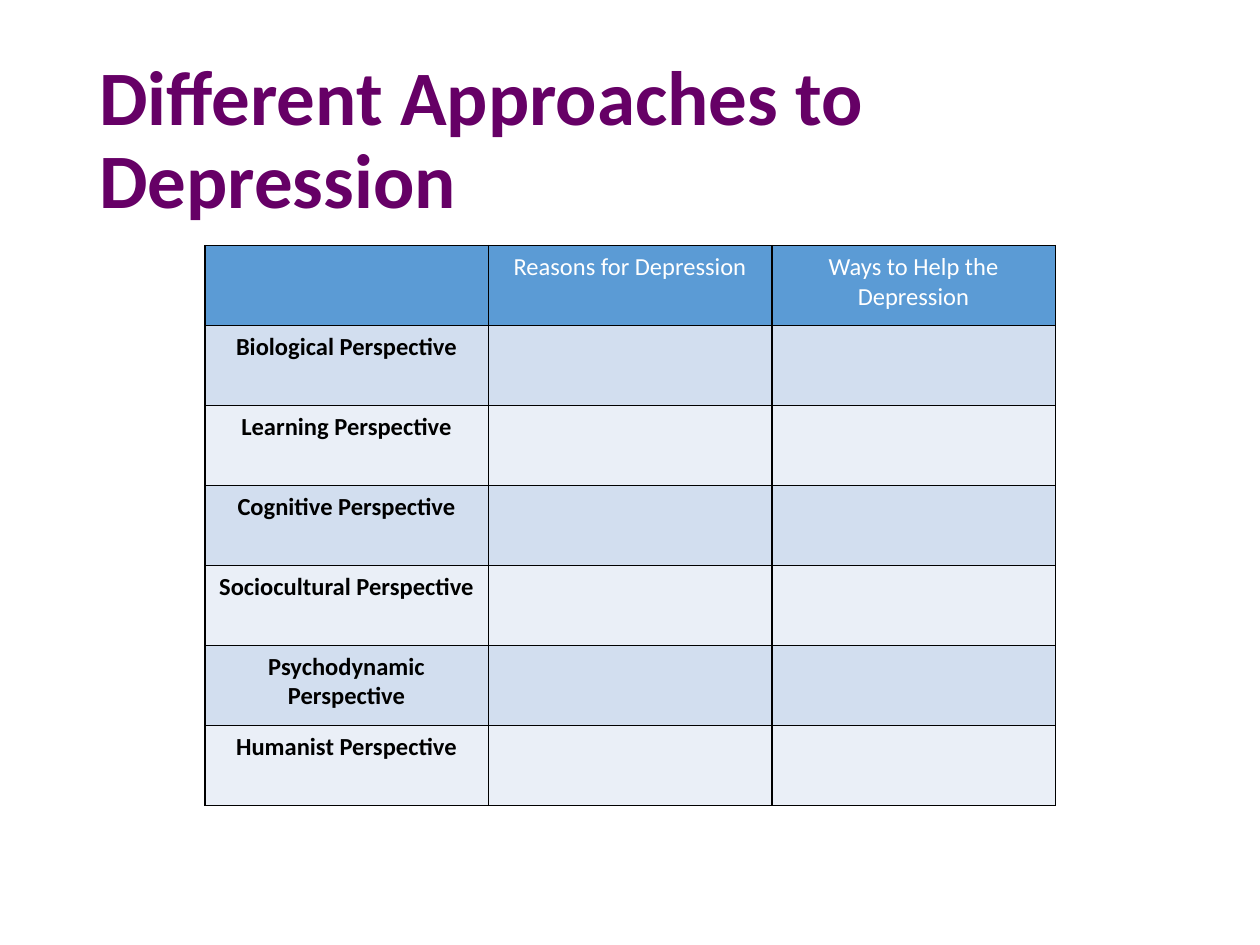
from lxml import etree
from pptx import Presentation
from pptx.dml.color import RGBColor
from pptx.enum.text import MSO_ANCHOR, MSO_AUTO_SIZE, PP_ALIGN
from pptx.oxml.ns import qn
from pptx.util import Pt

LEFT, CENTER = PP_ALIGN.LEFT, PP_ALIGN.CENTER
TOP, MIDDLE = MSO_ANCHOR.TOP, MSO_ANCHOR.MIDDLE
NO_AUTOFIT = MSO_AUTO_SIZE.NONE

PURPLE = RGBColor(0x66, 0x00, 0x66)
BLACK = RGBColor(0x00, 0x00, 0x00)
WHITE = RGBColor(0xFF, 0xFF, 0xFF)
HEADER_BLUE = RGBColor(0x5B, 0x9B, 0xD5)
BAND_DARK = RGBColor(0xD2, 0xDE, 0xEF)
BAND_LIGHT = RGBColor(0xEA, 0xEF, 0xF7)

TITLE_ONLY = 5
HEADINGS = ["", "Reasons for Depression", "Ways to Help the Depression"]
PERSPECTIVES = ["Biological", "Learning", "Cognitive", "Sociocultural",
                "Psychodynamic", "Humanist"]


class SlideBuilder:
    """Holds the slide and its shared text and border style."""

    font_name = "Calibri"
    border_width = Pt(1)
    border_color = BLACK

    def __init__(self, slide):
        self.slide = slide

    def format_paragraph(self, paragraph, size, color, bold, align):
        paragraph.alignment = align
        font = paragraph.font
        font.name, font.size, font.bold = self.font_name, Pt(size), bold
        font.color.rgb = color

    def title(self, text, left, top, width, height):
        title = self.slide.shapes.title
        title.left, title.top = Pt(left), Pt(top)
        title.width, title.height = Pt(width), Pt(height)
        frame = title.text_frame
        frame.text = text
        frame.word_wrap = True
        frame.auto_size = NO_AUTOFIT
        frame.vertical_anchor = MIDDLE
        heading = frame.paragraphs[0]
        heading.line_spacing = 0.9
        self.format_paragraph(heading, 44, PURPLE, True, LEFT)

    def border(self, cell):
        properties = cell._tc.get_or_add_tcPr()
        for side in ("a:lnL", "a:lnR", "a:lnT", "a:lnB"):
            line = etree.SubElement(properties, qn(side), w=str(self.border_width))
            fill = etree.SubElement(line, qn("a:solidFill"))
            etree.SubElement(fill, qn("a:srgbClr"), val=str(self.border_color))

    def cell(self, cell, text, fill, color, bold):
        # The schema wants the borders ahead of the fill.
        self.border(cell)
        cell.fill.solid()
        cell.fill.fore_color.rgb = fill
        cell.margin_left = cell.margin_right = Pt(5.4)
        cell.margin_top = cell.margin_bottom = Pt(3.6)
        cell.vertical_anchor = TOP
        cell.text = text
        self.format_paragraph(cell.text_frame.paragraphs[0], 14, color, bold, CENTER)

    def table(self, rows, left, top, column_width, row_height):
        column_count = len(rows[0])
        table = self.slide.shapes.add_table(
            len(rows), column_count, Pt(left), Pt(top),
            Pt(column_width * column_count), Pt(row_height * len(rows))).table
        for column in table.columns:
            column.width = Pt(column_width)
        for row_index, texts in enumerate(rows):
            table.rows[row_index].height = Pt(row_height)
            is_header = row_index == 0
            band = BAND_DARK if row_index % 2 else BAND_LIGHT
            for column_index, text in enumerate(texts):
                self.cell(table.cell(row_index, column_index), text,
                          fill=HEADER_BLUE if is_header else band,
                          color=WHITE if is_header else BLACK,
                          bold=not is_header)


def main():
    presentation = Presentation()
    presentation.slide_width, presentation.slide_height = Pt(720), Pt(540)
    layout = presentation.slide_layouts[TITLE_ONLY]
    builder = SlideBuilder(presentation.slides.add_slide(layout))

    builder.title("Different Approaches to Depression", 49.5, 28.75, 621, 104.4)
    rows = [HEADINGS] + [[f"{name} Perspective", "", ""] for name in PERSPECTIVES]
    builder.table(rows, left=117, top=140.4, column_width=162, row_height=45.7)

    presentation.save("out.pptx")


if __name__ == "__main__":
    main()
